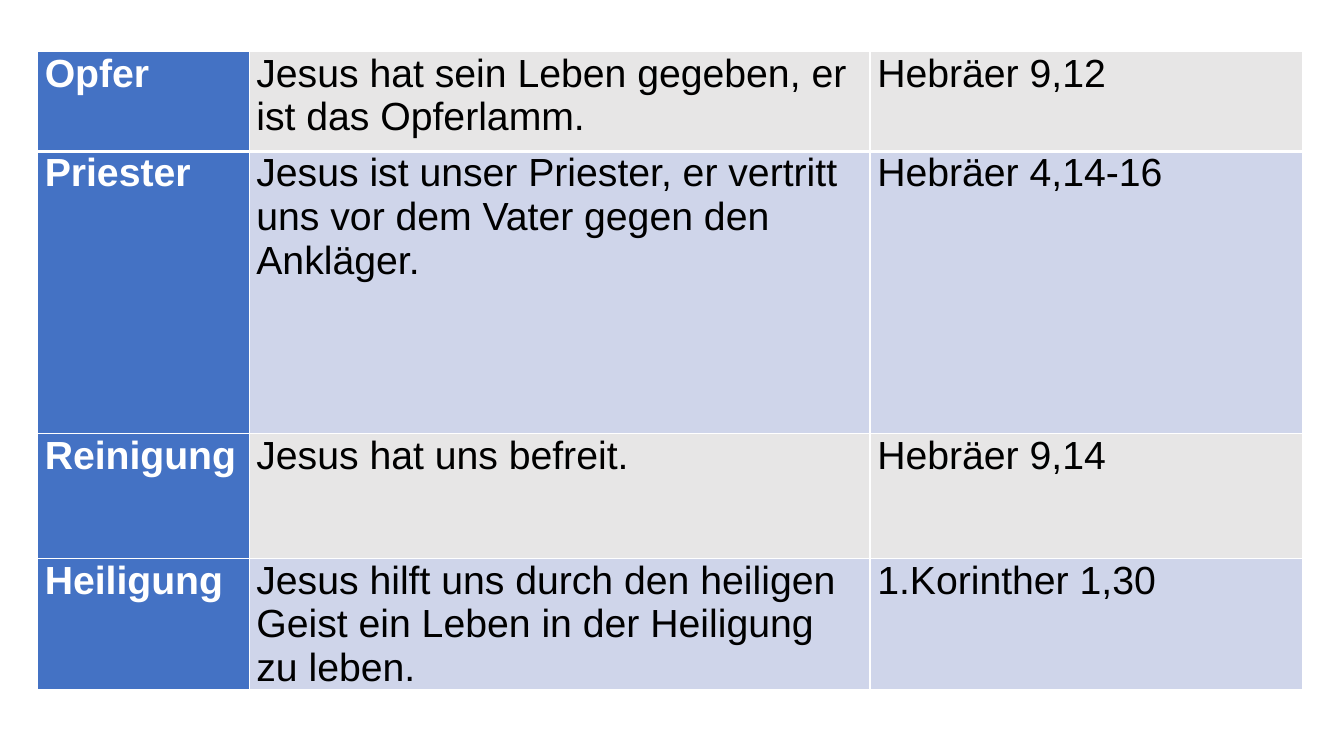
from lxml.etree import SubElement
from pptx import Presentation
from pptx.dml.color import RGBColor
from pptx.oxml.ns import qn
from pptx.util import Pt

BLUE = RGBColor(0x44, 0x72, 0xC4)
GREY = RGBColor(0xE7, 0xE6, 0xE6)
PALE = RGBColor(0xCF, 0xD5, 0xEA)
WHITE = RGBColor(0xFF, 0xFF, 0xFF)
BLACK = RGBColor(0, 0, 0)

COLS = [151.2, 443.5, 308.9]
ROWS = [
    (71.3, "Opfer", "Jesus hat sein Leben gegeben, er ist das Opferlamm.",
     "Hebräer 9,12"),
    (201.6, "Priester",
     "Jesus ist unser Priester, er vertritt uns vor dem Vater gegen den Ankläger.",
     "Hebräer 4,14-16"),
    (89.3, "Reinigung", "Jesus hat uns befreit.", "Hebräer 9,14"),
    (71.3, "Heiligung",
     "Jesus hilft uns durch den heiligen Geist ein Leben in der Heiligung zu leben.",
     "1.Korinther 1,30"),
]


def set_edge(cell, side, width):
    # Borders must come before the fill in the cell properties
    props = cell._tc.get_or_add_tcPr()
    line = SubElement(props, qn(f"a:{side}"), w=str(Pt(width)))
    fill = SubElement(line, qn("a:solidFill"))
    SubElement(fill, qn("a:srgbClr"), val=str(WHITE))


def fill_cell(cell, text, back, color, bold, top, base):
    for side, width in (("lnL", 1), ("lnR", 1), ("lnT", top), ("lnB", base)):
        set_edge(cell, side, width)
    cell.fill.solid()
    cell.fill.fore_color.rgb = back
    cell.margin_left = cell.margin_right = Pt(5.2)
    cell.margin_top = cell.margin_bottom = 0
    cell.text_frame.text = text
    font = cell.text_frame.paragraphs[0].runs[0].font
    font.name, font.size, font.bold = "Arial", Pt(28), bold
    font.color.rgb = color


def add_grid(slide):
    high = sum(row[0] for row in ROWS)
    frame = slide.shapes.add_table(len(ROWS), len(COLS), Pt(26.8), Pt(36.9),
                                   Pt(sum(COLS)), Pt(high))
    table = frame.table
    for col, width in zip(table.columns, COLS):
        col.width = Pt(width)
    for r, (height, *texts) in enumerate(ROWS):
        table.rows[r].height = Pt(height)
        # Thick rule below the first row
        top, base = 3 if r == 1 else 1, 3 if r == 0 else 1
        band = PALE if r % 2 else GREY
        for c, text in enumerate(texts):
            head = c == 0
            fill_cell(table.cell(r, c), text, BLUE if head else band,
                      WHITE if head else BLACK, head, top, base)


def main():
    deck = Presentation()
    deck.slide_width, deck.slide_height = Pt(960), Pt(540)
    slide = deck.slides.add_slide(deck.slide_layouts[6])
    add_grid(slide)
    deck.save("out.pptx")


if __name__ == "__main__":
    main()
